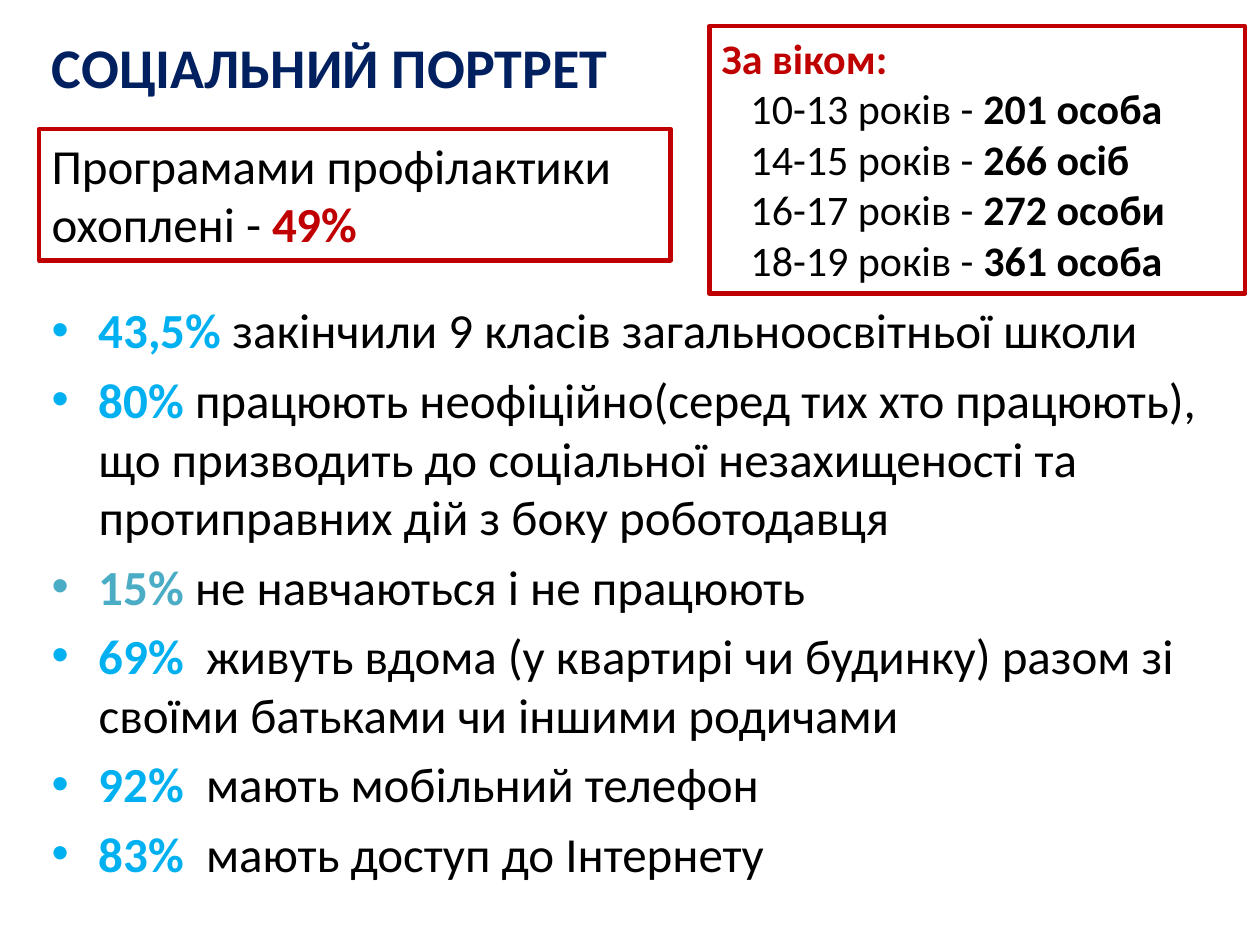
import pptx
import pptx.dml.color
import pptx.enum.shapes
import pptx.enum.text
import pptx.oxml.ns
import pptx.util
from lxml import etree
from pptx.util import Cm

COLOURS = {
    "navy": "002060",
    "red": "C00000",
    "sky": "00B0F0",
    "teal": "4BACC6",
    "black": "000000",
}
AGES = [
    ("10-13", "201 особа"),
    ("14-15", "266 осіб"),
    ("16-17", "272 особи"),
    ("18-19", "361 особа"),
]
FACTS = [
    ("43,5% ", "закінчили 9 класів загальноосвітньої школи", "sky"),
    ("80% ", "працюють неофіційно(серед тих хто працюють), що призводить до "
             "соціальної незахищеності та протиправних дій з боку роботодавця", "sky"),
    ("15% ", "не навчаються і не працюють", "teal"),
    ("69%  ", "живуть вдома (у квартирі чи будинку) разом зі своїми батьками "
              "чи іншими родичами", "sky"),
    ("92%  ", "мають мобільний телефон", "sky"),
    ("83%  ", "мають доступ до Інтернету", "sky"),
]


def colour(name):
    """Return the named colour as an RGB value."""
    return pptx.dml.color.RGBColor.from_string(COLOURS[name])


def add_span(para, text, size, tint="black", bold=False):
    """Append one formatted run to a paragraph."""
    span = para.add_run()
    span.text = text
    formats = {"name": "Calibri", "size": pptx.util.Pt(size), "bold": bold}
    for key, value in formats.items():
        setattr(span.font, key, value)
    span.font.color.rgb = colour(tint)


def set_indent(para, left, first=0):
    """Set the left margin and first-line indent of a paragraph."""
    for key, value in {"marL": left, "indent": first}.items():
        para._p.get_or_add_pPr().set(key, str(int(value)))


def add_bullet(para, tint):
    """Give a paragraph a coloured hanging bullet."""
    set_indent(para, Cm(0.95), -Cm(0.95))
    properties = para._p.get_or_add_pPr()
    qn = pptx.oxml.ns.qn
    bullet_colour = etree.SubElement(properties, qn("a:buClr"))
    etree.SubElement(bullet_colour, qn("a:srgbClr"), val=COLOURS[tint])
    etree.SubElement(properties, qn("a:buFont"), typeface="Arial")
    etree.SubElement(properties, qn("a:buChar"), char="•")


def add_frame(slide, box):
    """Add a red outlined rectangle and return its text frame."""
    frame = slide.shapes.add_shape(pptx.enum.shapes.MSO_SHAPE.RECTANGLE, *box)
    frame.shadow.inherit = False
    frame.fill.background()
    frame.line.color.rgb = colour("red")
    frame.line.width = pptx.util.Pt(2.5)
    formats = {"word_wrap": True, "vertical_anchor": pptx.enum.text.MSO_ANCHOR.TOP}
    for key, value in formats.items():
        setattr(frame.text_frame, key, value)
    return frame.text_frame


def next_para(text, index):
    """Return the first paragraph or a new one, aligned left."""
    para = text.add_paragraph() if index else text.paragraphs[0]
    para.alignment = pptx.enum.text.PP_ALIGN.LEFT
    return para


def add_title(slide, box):
    """Write the slide heading."""
    text = slide.shapes.add_textbox(*box).text_frame
    text.word_wrap = False
    add_span(next_para(text, 0), "CОЦІАЛЬНИЙ ПОРТРЕТ", 32, "navy", True)


def add_coverage(slide, box):
    """Write the framed share covered by prevention programmes."""
    para = next_para(add_frame(slide, box), 0)
    add_span(para, "Програмами профілактики охоплені - ", 28)
    add_span(para, "49%", 28, "red", True)


def add_ages(slide, box):
    """Write the framed breakdown by age."""
    text = add_frame(slide, box)
    add_span(next_para(text, 0), "За віком:", 24, "red", True)
    for index, (years, count) in enumerate(AGES, 1):
        para = next_para(text, index)
        set_indent(para, Cm(0.58))
        add_span(para, f"{years} років - ", 24)
        add_span(para, count, 24, bold=True)


def add_facts(slide, box):
    """Write the bulleted list of facts."""
    text = slide.shapes.add_textbox(*box).text_frame
    text.word_wrap = True
    for index, (share, fact, tint) in enumerate(FACTS):
        para = next_para(text, index)
        para.space_before = pptx.util.Pt(6)
        add_bullet(para, tint)
        add_span(para, share, 28, tint, True)
        add_span(para, fact, 28)


def main():
    """Build and save the slide."""
    deck = pptx.Presentation()
    deck.slide_width, deck.slide_height = Cm(25.4), Cm(19.05)
    slide = deck.slides.add_slide(deck.slide_layouts[6])
    left, top = Cm(0.79), Cm(0.53)
    add_facts(slide, (left, Cm(5.92), Cm(24.3), Cm(12.1)))
    add_title(slide, (left, top, Cm(12.1), Cm(1.63)))
    add_ages(slide, (Cm(14.3), top, Cm(10.8), Cm(5.39)))
    add_coverage(slide, (left, Cm(2.6), Cm(12.73), Cm(2.65)))
    deck.save("out.pptx")


if __name__ == "__main__":
    main()
